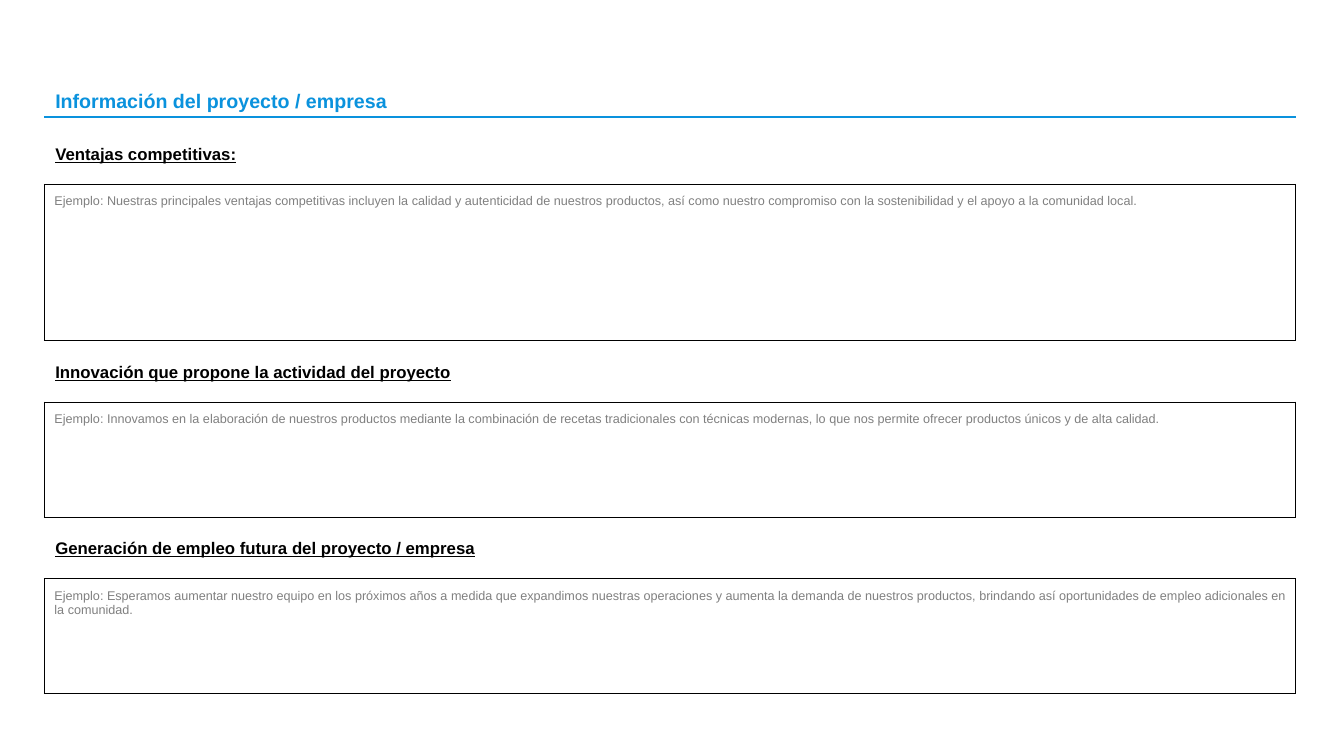
from lxml import etree
from pptx import Presentation
from pptx.dml.color import RGBColor
from pptx.enum.shapes import MSO_CONNECTOR
from pptx.enum.text import MSO_ANCHOR
from pptx.oxml.ns import qn
from pptx.util import Pt

PX = 9144
STRAIGHT = MSO_CONNECTOR.STRAIGHT
MIDDLE = MSO_ANCHOR.MIDDLE
TOP = MSO_ANCHOR.TOP
BLUE, BLACK, GREY, WHITE = "0A92DD", "000000", "808080", "FFFFFF"
LEFT, WIDTH = 44, 1241
HEADING_HEIGHT, HEADING_TO_ANSWER = 27, 44

SECTIONS = [
    (139, 446, 155, "Ventajas competitivas:",
     "Ejemplo: Nuestras principales ventajas competitivas incluyen la calidad y autenticidad de nuestros "
     "productos, así como nuestro compromiso con la sostenibilidad y el apoyo a la comunidad local."),
    (355, 593, 114, "Innovación que propone la actividad del proyecto",
     "Ejemplo: Innovamos en la elaboración de nuestros productos mediante la combinación de recetas "
     "tradicionales con técnicas modernas, lo que nos permite ofrecer productos únicos y de alta calidad."),
    (530, 446, 114, "Generación de empleo futura del proyecto / empresa",
     "Ejemplo: Esperamos aumentar nuestro equipo en los próximos años a medida que expandimos nuestras "
     "operaciones y aumenta la demanda de nuestros productos, brindando así oportunidades de empleo "
     "adicionales en la comunidad."),
]


def px(*lengths):
    """Turn pixel lengths into EMU."""
    return [length * PX for length in lengths]


def color(value):
    """Return the colour of a hex string."""
    return RGBColor.from_string(value)


def write(frame, text, size, ink, bold=False, underline=False):
    """Write one styled paragraph into a text frame."""
    frame.text = text
    font = frame.paragraphs[0].runs[0].font
    font.name, font.size = "Arial", Pt(size)
    font.bold, font.underline = bold, underline
    font.color.rgb = color(ink)


def add_heading(slide, left, top, width, text, size, ink, underline=False):
    """Add a bold heading line."""
    heading = slide.shapes.add_textbox(*px(left, top, width, HEADING_HEIGHT)).text_frame
    heading.word_wrap = True
    heading.vertical_anchor = MIDDLE
    write(heading, text, size, ink, True, underline)


def add_title(slide, left, top, width):
    """Add the slide title and the rule below it."""
    add_heading(slide, left + 1, top, 446, "Información del proyecto / empresa", 14, BLUE)
    rule_y = top + 30
    rule = slide.shapes.add_connector(STRAIGHT, *px(left, rule_y, left + width, rule_y))
    rule.line.color.rgb = color(BLUE)
    rule.line.width = Pt(1.5)
    etree.SubElement(rule._element.spPr, qn("a:effectLst"))


def add_borders(cell):
    """Draw a thin black border on the four sides of a cell."""
    properties = cell._tc.get_or_add_tcPr()
    for position, side in enumerate(("a:lnL", "a:lnR", "a:lnT", "a:lnB")):
        border = etree.Element(qn(side), w=str(Pt(1)))
        fill = etree.SubElement(border, qn("a:solidFill"))
        etree.SubElement(fill, qn("a:srgbClr"), val=BLACK)
        properties.insert(position, border)


def add_answer(slide, left, top, width, height, example):
    """Add a bordered one-cell table holding an example answer."""
    table = slide.shapes.add_table(1, 1, *px(left, top, width, height)).table
    table.first_row = table.horz_banding = False
    answer = table.cell(0, 0)
    answer.fill.solid()
    answer.fill.fore_color.rgb = color(WHITE)
    answer.vertical_anchor = TOP
    answer.margin_left, answer.margin_right, answer.margin_top, answer.margin_bottom = px(10, 10, 10, 10)
    write(answer.text_frame, example, 9, GREY)
    add_borders(answer)


def add_section(slide, left, top, width, heading_width, answer_height, heading, example):
    """Add a section heading with its answer area."""
    add_heading(slide, left + 1, top, heading_width, heading, 12, BLACK, True)
    add_answer(slide, left, top + HEADING_TO_ANSWER, width, answer_height, example)


def main():
    """Build and save the slide."""
    deck = Presentation()
    deck.slide_width, deck.slide_height = px(1333, 750)
    slide = deck.slides.add_slide(deck.slide_layouts[6])
    add_title(slide, LEFT, 86, WIDTH)
    for top, heading_width, answer_height, heading, example in SECTIONS:
        add_section(slide, LEFT, top, WIDTH, heading_width, answer_height, heading, example)
    deck.save("out.pptx")


if __name__ == "__main__":
    main()
